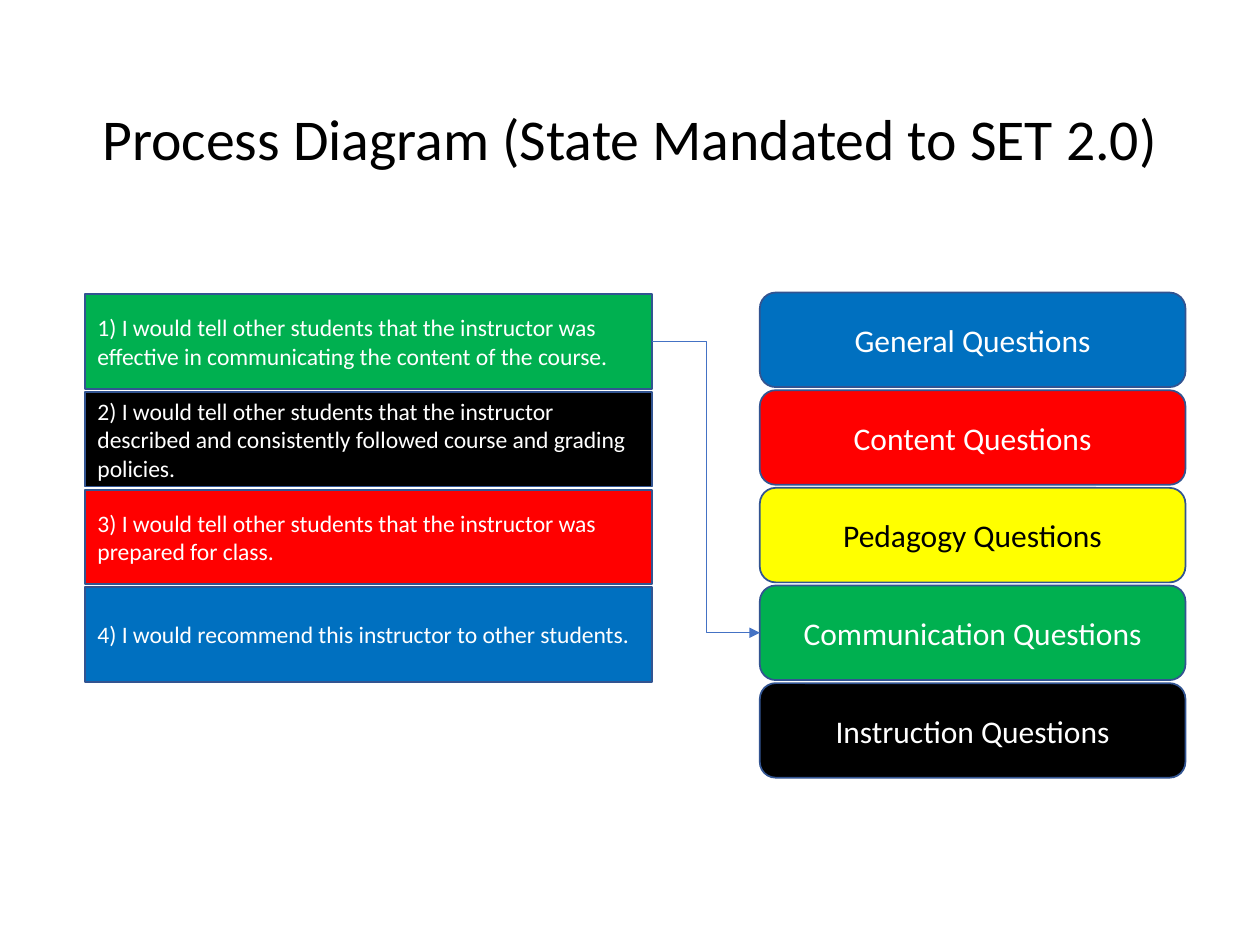
from dataclasses import dataclass

import lxml.etree
import pptx
import pptx.dml.color
import pptx.enum.shapes
import pptx.enum.text
import pptx.oxml.ns
import pptx.util

Pt = pptx.util.Pt
Shape = pptx.enum.shapes.MSO_SHAPE
Align = pptx.enum.text.PP_ALIGN

BLUE, RED, YELLOW, GREEN = "0070C0", "FF0000", "FFFF00", "00B050"
BLACK, WHITE = "000000", "FFFFFF"
OUTLINE, ARROW = "325491", "4472C4"
BOX_HEIGHT = 54
BOX_PITCH = 55.8


@dataclass
class Box:
    text: str
    fill: str
    color: str = WHITE


@dataclass
class Column:
    left: float
    top: float
    width: float
    outline: Shape
    size: float
    align: Align
    boxes: list[Box]


STATE_ITEMS = Column(48.6, 168.2, 324, Shape.RECTANGLE, 13.5, Align.LEFT, [
    Box("1) I would tell other students that the instructor was effective in "
        "communicating the content of the course.", GREEN),
    Box("2) I would tell other students that the instructor described and "
        "consistently followed course and grading policies.", BLACK),
    Box("3) I would tell other students that the instructor was prepared for class.", RED),
    Box("4) I would recommend this instructor to other students.", BLUE),
])
SET_CATEGORIES = Column(434.2, 167.2, 243.2, Shape.ROUNDED_RECTANGLE, 18, Align.CENTER, [
    Box("General Questions", BLUE),
    Box("Content Questions", RED),
    Box("Pedagogy Questions", YELLOW, BLACK),
    Box("Communication Questions", GREEN),
    Box("Instruction Questions", BLACK),
])


def rgb(value: str) -> pptx.dml.color.RGBColor:
    return pptx.dml.color.RGBColor.from_string(value)


def write_text(shape, text: str, size: float, color: str, align: Align):
    frame = shape.text_frame
    frame.word_wrap = True
    frame.vertical_anchor = pptx.enum.text.MSO_ANCHOR.MIDDLE
    paragraph = frame.paragraphs[0]
    paragraph.text = text
    paragraph.alignment = align
    paragraph.font.name = "Calibri"
    paragraph.font.size = Pt(size)
    paragraph.font.color.rgb = rgb(color)
    return paragraph


def draw_title(slide, text: str) -> None:
    title = slide.shapes.add_textbox(Pt(49.5), Pt(28.8), Pt(621), Pt(104.4))
    paragraph = write_text(title, text, 33, BLACK, Align.CENTER)
    paragraph.line_spacing = 0.9


def draw_column(slide, column: Column) -> list:
    shapes = []
    for index, box in enumerate(column.boxes):
        shape = slide.shapes.add_shape(
            column.outline, Pt(column.left), Pt(column.top + index * BOX_PITCH),
            Pt(column.width), Pt(BOX_HEIGHT))
        shape.shadow.inherit = False
        shape.fill.solid()
        shape.fill.fore_color.rgb = rgb(box.fill)
        shape.line.color.rgb = rgb(OUTLINE)
        shape.line.width = Pt(1)
        write_text(shape, box.text, column.size, box.color, column.align)
        shapes.append(shape)
    return shapes


def draw_arrow(slide, source, target) -> None:
    connector = slide.shapes.add_connector(
        pptx.enum.shapes.MSO_CONNECTOR.ELBOW, 0, 0, 0, 0)
    connector.begin_connect(source, 3)
    connector.end_connect(target, 1)
    connector.line.color.rgb = rgb(ARROW)
    connector.line.width = Pt(0.5)
    qn = pptx.oxml.ns.qn
    properties = connector.element.spPr
    line = properties.find(qn("a:ln"))
    lxml.etree.SubElement(line, qn("a:tailEnd"), type="triangle")
    lxml.etree.SubElement(properties, qn("a:effectLst"))


def main() -> None:
    presentation = pptx.Presentation()
    presentation.slide_width = Pt(720)
    presentation.slide_height = Pt(540)
    slide = presentation.slides.add_slide(presentation.slide_layouts[6])
    draw_title(slide, "Process Diagram (State Mandated to SET 2.0)")
    categories = draw_column(slide, SET_CATEGORIES)
    items = draw_column(slide, STATE_ITEMS)
    draw_arrow(slide, items[0], categories[3])
    presentation.save("out.pptx")


if __name__ == "__main__":
    main()
